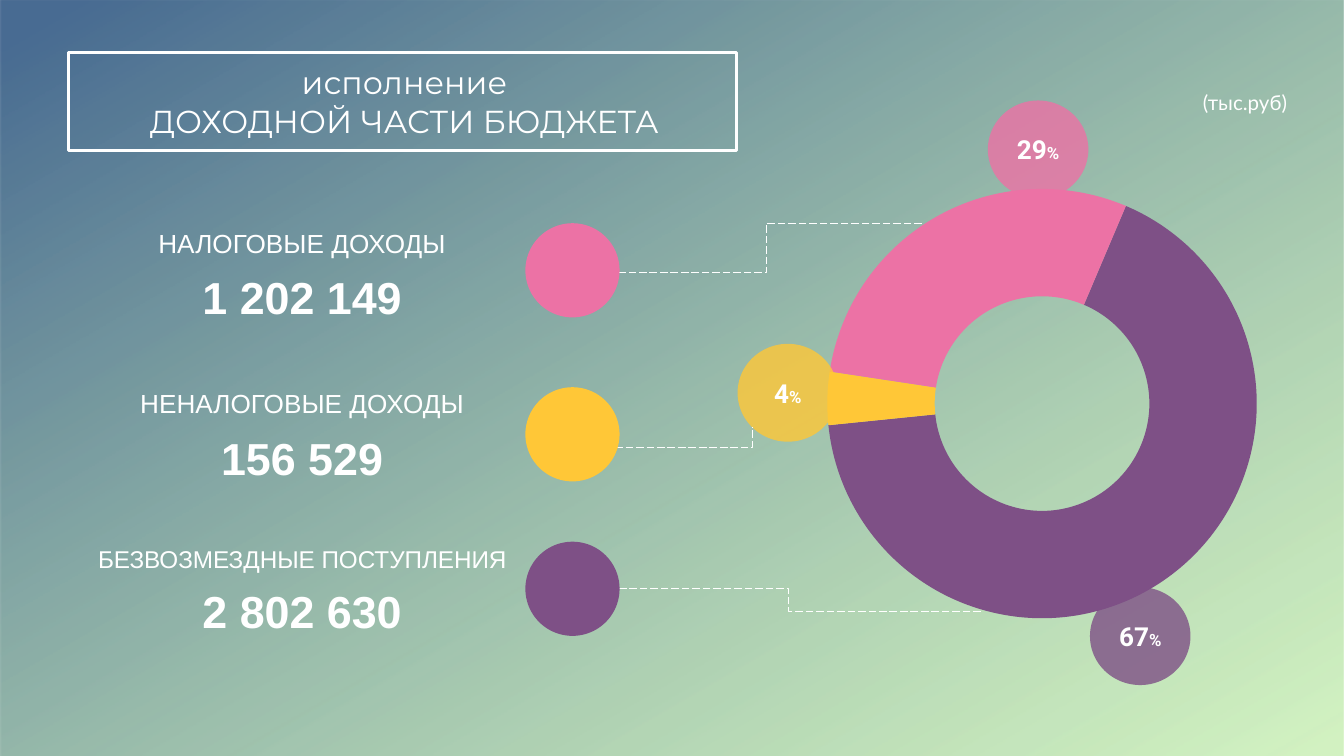
from dataclasses import dataclass

from lxml import etree
from pptx import Presentation
from pptx.chart.data import CategoryChartData
from pptx.dml.color import RGBColor
from pptx.enum.chart import XL_CHART_TYPE
from pptx.enum.dml import MSO_LINE
from pptx.enum.shapes import MSO_CONNECTOR, MSO_SHAPE
from pptx.enum.text import MSO_ANCHOR, PP_ALIGN
from pptx.oxml.ns import qn
from pptx.util import Cm, Pt

RING = XL_CHART_TYPE.DOUGHNUT
DASH = MSO_LINE.LONG_DASH
ELBOW = MSO_CONNECTOR.ELBOW
RECT, OVAL = MSO_SHAPE.RECTANGLE, MSO_SHAPE.OVAL
MIDDLE, TOP = MSO_ANCHOR.MIDDLE, MSO_ANCHOR.TOP
CENTER = PP_ALIGN.CENTER


@dataclass(frozen=True)
class Theme:
    """Hold the colours, fonts and type sizes of the slide."""
    white: str = "FFFFFF"
    grey: str = "7F7F7F"
    green: str = "BCEDA1"
    blue: str = "486B92"
    pink: str = "EC72A5"
    gold: str = "FFC737"
    plum: str = "7E5086"
    head: str = "Montserrat"
    note: str = "Lato"
    body: str = "Arial"
    mark: str = "Roboto"
    title: int = 17
    unit: int = 11
    label: int = 14
    small: int = 13
    total: int = 24
    share: int = 14
    sign: int = 9
    axis: int = 10


T = Theme()


def rgb(code):
    """Turn a hex code into a colour."""
    return RGBColor.from_string(code)


def style(font, name, size, bold=False, color=T.white):
    """Set the look of a font."""
    font.name, font.size, font.bold = name, Pt(size), bold
    font.color.rgb = rgb(color)


def fade(tint, part):
    """Make every colour under an element partly clear."""
    for node in tint.iter(qn("a:srgbClr")):
        etree.SubElement(node, qn("a:alpha")).set("val", str(part * 1000))


def add_form(slide, kind, box, color=None):
    """Add a flat shape without outline."""
    form = slide.shapes.add_shape(kind, *map(Cm, box))
    form.shadow.inherit = False
    form.line.fill.background()
    if color:
        form.fill.solid()
        form.fill.fore_color.rgb = rgb(color)
    else:
        form.fill.background()
    return form


def add_back(slide, wide, high):
    """Cover the slide with the gradient."""
    back = add_form(slide, RECT, (0, 0, wide, high))
    back.rotation = 180
    back.fill.gradient()
    back.fill.gradient_angle = 300
    first, last = back.fill.gradient_stops
    first.color.rgb, last.color.rgb = rgb(T.green), rgb(T.blue)
    first.position, last.position = 0, 0.97
    fade(back.element.spPr.find(".//" + qn("a:gs")), 65)


def write(frame, lines, pad, anchor=TOP, gap=0):
    """Fill a text frame with centred lines of text, font, size and weight."""
    frame.word_wrap = True
    frame.vertical_anchor = anchor
    frame.margin_left = frame.margin_right = Cm(pad)
    frame.margin_top = frame.margin_bottom = Cm(pad / 2)
    for num, (text, name, size, bold) in enumerate(lines):
        para = frame.add_paragraph() if num else frame.paragraphs[0]
        para.text = text
        para.alignment = CENTER
        para.space_before = Pt(gap if num else 0)
        style(para.font, name, size, bold)


def add_title(slide, lines):
    """Set the title inside its white frame."""
    frame = add_form(slide, RECT, (1.3, 0.99, 12.62, 1.85))
    frame.line.color.rgb = rgb(T.white)
    frame.line.width = Pt(1.5)
    title = slide.shapes.title
    title.left, title.top, title.width, title.height = map(
        Cm, (1.75, 1.14, 11.79, 1.55))
    write(title.text_frame, [(line, T.head, T.title, False) for line in lines],
          0.1, MIDDLE)
    frame.element.addnext(title.element)


def add_text(slide, box, lines, pad, gap=0):
    """Add a text box."""
    text = slide.shapes.add_textbox(*map(Cm, box))
    write(text.text_frame, lines, pad, gap=gap)


def add_ring(slide, box, data):
    """Add the doughnut chart from pairs of value and colour."""
    table = CategoryChartData()
    table.categories = [str(num + 1) for num in range(len(data))]
    table.add_series("Series 1", [value for value, _ in data])
    chart = slide.shapes.add_chart(RING, *map(Cm, box), table).chart
    chart.has_legend = chart.has_title = False
    style(chart.font, T.note, T.axis, color=T.grey)
    plot = chart.plots[0]
    plot.vary_by_categories = True
    for num, (_, color) in enumerate(data):
        look = plot.series[0].points[num].format
        look.fill.solid()
        look.fill.fore_color.rgb = rgb(color)
        look.line.fill.background()
    area = chart.element.find(".//" + qn("c:plotArea"))
    for tag, value in (("c:firstSliceAng", 23), ("c:holeSize", 50)):
        area.find(".//" + qn(tag)).set("val", str(value))
    for old in area.findall(qn("c:layout")):
        area.remove(old)
    layout = etree.Element(qn("c:layout"))
    area.insert(0, layout)
    manual = etree.SubElement(layout, qn("c:manualLayout"))
    for tag, value in (("layoutTarget", "inner"), ("xMode", "edge"),
                       ("yMode", "edge"), ("x", 0.05), ("y", 0.04),
                       ("w", 0.91), ("h", 0.91)):
        etree.SubElement(manual, qn("c:" + tag)).set("val", str(value))


def add_share(slide, spot, value, color):
    """Add a see-through bubble with a share in percent."""
    form = add_form(slide, OVAL, (*spot, 1.9, 1.85), color)
    fade(form.element.spPr, 80)
    frame = form.text_frame
    frame.word_wrap = False
    frame.vertical_anchor = MIDDLE
    para = frame.paragraphs[0]
    para.alignment = CENTER
    for text, size in ((str(value), T.share), ("%", T.sign)):
        run = para.add_run()
        run.text = text
        style(run.font, T.mark, size, True)


def add_wire(slide, start, end, kind):
    """Add a dashed elbow connector."""
    wire = slide.shapes.add_connector(ELBOW, *map(Cm, (*start, *end)))
    wire.line.color.rgb = rgb(T.white)
    wire.line.width = Pt(0.5)
    wire.line.dash_style = DASH
    form = wire.element.spPr
    form.find(qn("a:prstGeom")).set("prst", kind)
    etree.SubElement(form, qn("a:effectLst"))


def main():
    """Build the slide and save it."""
    deck = Presentation()
    wide, high = 25.4, 14.29
    deck.slide_width, deck.slide_height = Cm(wide), Cm(high)
    slide = deck.slides.add_slide(deck.slide_layouts[5])
    add_back(slide, wide, high)
    add_title(slide, ("исполнение", "ДОХОДНОЙ ЧАСТИ БЮДЖЕТА"))
    add_text(slide, (22.02, 1.65, 3.02, 0.56),
             [("(тыс.руб)", T.note, T.unit, False)], 0.1)
    shares = ((67, T.plum, (20.6, 11.1)), (4, T.gold, (13.94, 6.5)),
              (29, T.pink, (18.67, 1.9)))
    add_ring(slide, (15.19, 3.18, 8.92, 8.99),
             [(value, color) for value, color, _ in shares])
    for value, color, spot in shares:
        add_share(slide, spot, value, color)
    for start, end, kind in (
            ((17.42, 4.22), (11.56, 5.16), "bentConnector3"),
            ((10.24, 8.46), (14.22, 8.08), "bentConnector2"),
            ((18.54, 11.56), (11.28, 11.13), "bentConnector3")):
        add_wire(slide, start, end, kind)
    for name, total, size, top, color, dot in (
            ("НАЛОГОВЫЕ ДОХОДЫ", "1 202 149", T.label, 3.99, T.pink, 4.22),
            ("НЕНАЛОГОВЫЕ ДОХОДЫ", "156 529", T.label, 7.03, T.gold, 7.32),
            ("БЕЗВОЗМЕЗДНЫЕ ПОСТУПЛЕНИЯ", "2 802 630", T.small, 9.98,
             T.plum, 10.24)):
        add_text(slide, (0.95, top, 9.52, 2.42),
                 [(name, T.body, size, False), (total, T.body, T.total, True)],
                 0.6, 6)
        add_form(slide, OVAL, (9.93, dot, 1.78, 1.78), color)
    deck.save("out.pptx")


if __name__ == "__main__":
    main()
